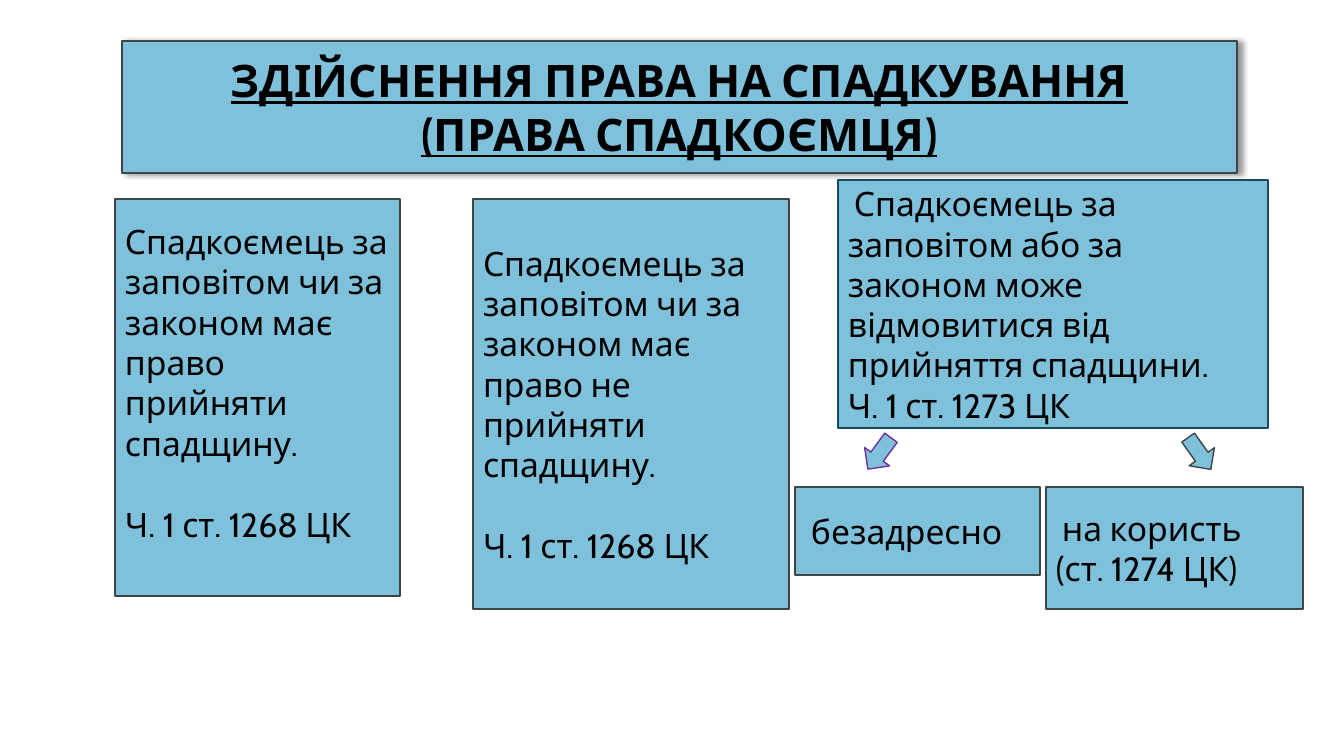
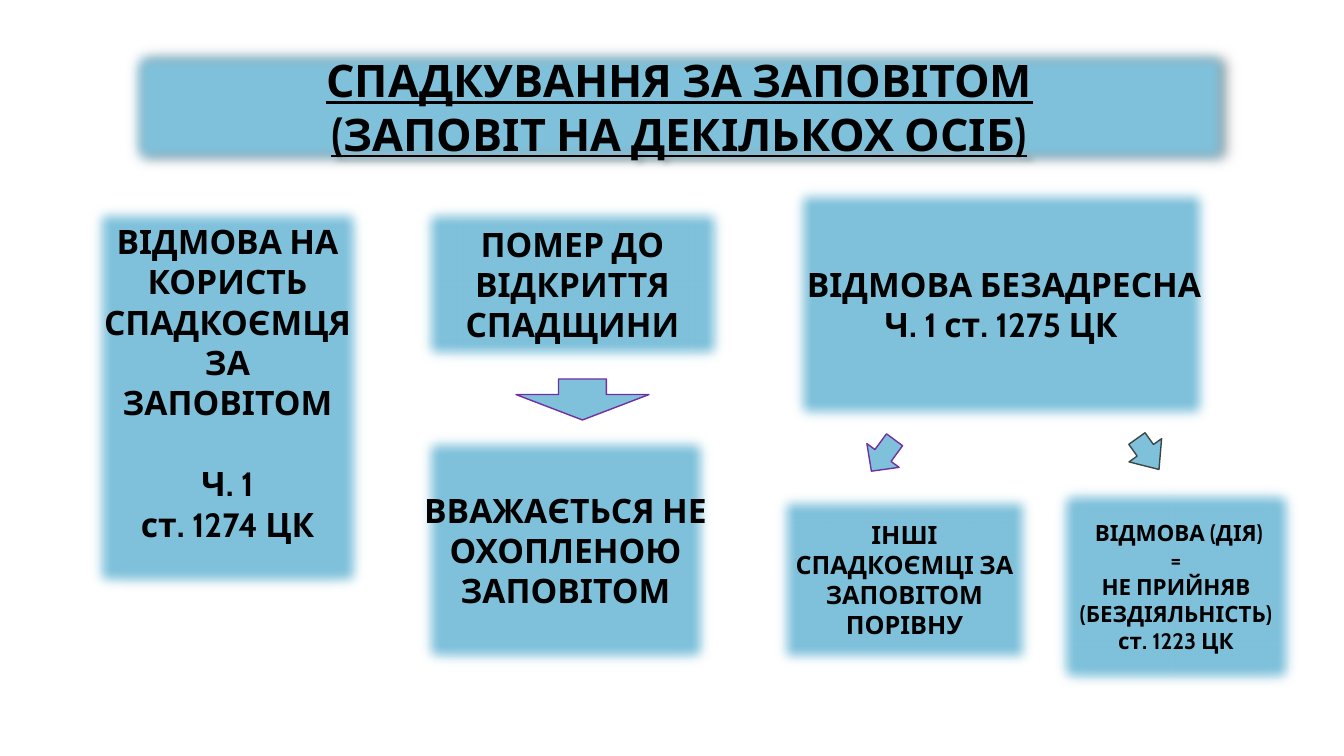
from dataclasses import dataclass
from lxml import etree
from pptx import Presentation
from pptx import util as u
from pptx.dml.color import RGBColor
from pptx.enum import shapes, text
from pptx.oxml.ns import qn

PX = 914400 / 100.8
SLIDE_SIZE = (1344, 756)


@dataclass(frozen=True)
class Theme:
    font: str = "Cabin"
    fill: str = "7FC1DB"
    ink: str = "000000"
    outline: str = "3D4647"
    deep_outline: str = "1A4A5D"
    violet: str = "7030A0"
    title_size: int = 32
    body_size: int = 24
    note_size: int = 18
    small_size: int = 16
    gap: int = 29  # points between a statement and its citation
    soft_edge: int = 14  # px


@dataclass(frozen=True)
class Box:
    place: tuple
    lines: tuple
    size: int = Theme.body_size
    outline: str = Theme.outline
    first_indent: int = 0
    gap_before: int = -1  # index of the paragraph set apart
    bottom_inset: int = 5


@dataclass(frozen=True)
class Arrow:
    place: tuple
    rotation: float = 0
    outline: str = Theme.outline
    proportions: tuple = (0.5, 0.5)


THEME = Theme()
TITLE_PLACE = (122, 41, 1115, 132)
TOP, LOWER_TOP = 199, 487
LEFT_TURN, RIGHT_TURN = 36.4, 324.5

# Content
SLIDES = [
    {
        "title": ("ЗДІЙСНЕННЯ ПРАВА НА СПАДКУВАННЯ", "(ПРАВА СПАДКОЄМЦЯ)"),
        "soft": False,
        "boxes": [
            Box((115, TOP, 285, 397),
                ("Спадкоємець за заповітом чи за законом має право прийняти спадщину.",
                 "Ч. 1 ст. 1268 ЦК"), gap_before=1, bottom_inset=35),
            Box((473, TOP, 316, 410),
                ("Спадкоємець за заповітом чи за законом має право не прийняти спадщину.",
                 "Ч. 1 ст. 1268 ЦК"), gap_before=1),
            Box((838, 180, 430, 248),
                ("Спадкоємець за заповітом або за законом може відмовитися від "
                 "прийняття спадщини.", "Ч. 1 ст. 1273 ЦК"),
                outline=THEME.deep_outline, first_indent=6),
            Box((795, LOWER_TOP, 245, 88), ("безадресно",), first_indent=6),
            Box((1046, LOWER_TOP, 257, 122), ("на користь", "(ст. 1274 ЦК)"),
                first_indent=6),
        ],
        "arrows": [
            Arrow((864, 434, 31, 39), LEFT_TURN, THEME.violet),
            Arrow((1184, 434, 31, 39), RIGHT_TURN),
        ],
    },
    {
        "title": ("СПАДКУВАННЯ ЗА ЗАПОВІТОМ", "(ЗАПОВІТ НА ДЕКІЛЬКОХ ОСІБ)"),
        "soft": True,
        "boxes": [
            Box((85, TOP, 285, 397),
                ("ВІДМОВА НА КОРИСТЬ СПАДКОЄМЦЯ", "ЗА\vЗАПОВІТОМ", "Ч. 1", "ст. 1274 ЦК"),
                gap_before=2, bottom_inset=35),
            Box((414, TOP, 317, 170), ("ПОМЕР ДО ВІДКРИТТЯ СПАДЩИНИ",)),
            Box((414, 428, 303, 244), ("ВВАЖАЄТЬСЯ НЕ ОХОПЛЕНОЮ ЗАПОВІТОМ",)),
            Box((786, 180, 430, 248), ("ВІДМОВА БЕЗАДРЕСНА", "Ч. 1 ст. 1275 ЦК"),
                outline=THEME.deep_outline, first_indent=6),
            Box((770, LOWER_TOP, 269, 185), ("ІНШІ СПАДКОЄМЦІ ЗА ЗАПОВІТОМ ПОРІВНУ",),
                THEME.note_size),
            Box((1049, 480, 254, 213),
                ("ВІДМОВА (ДІЯ)", "=", "НЕ ПРИЙНЯВ", "(БЕЗДІЯЛЬНІСТЬ)", "ст. 1223 ЦК"),
                THEME.small_size, first_indent=6),
        ],
        "arrows": [
            Arrow((516, 379, 133, 41), 0, THEME.violet, (0.36, 0.62)),
            Arrow((863, 436, 40, 39), LEFT_TURN, THEME.violet),
            Arrow((1128, 435, 40, 38), RIGHT_TURN, proportions=(0.5, 0.62)),
        ],
    },
]


def emu(px):
    return u.Emu(round(px * PX))


def add_filled_shape(slide, kind, place, outline):
    shape = slide.shapes.add_shape(kind, *map(emu, place))
    shape.shadow.inherit = False
    shape.fill.solid()
    shape.fill.fore_color.rgb = RGBColor.from_string(THEME.fill)
    shape.line.color.rgb = RGBColor.from_string(outline)
    shape.line.width = u.Pt(1)
    return shape


def add_effects(shape, shadow, soft):
    effects = shape._element.spPr.find(qn("a:effectLst"))
    if shadow:
        outer = etree.SubElement(effects, qn("a:outerShdw"), blurRad=str(u.Pt(4)),
                                 dist=str(u.Pt(3)), dir="0", algn="tl", rotWithShape="0")
        color = etree.SubElement(outer, qn("a:srgbClr"), val=THEME.ink)
        etree.SubElement(color, qn("a:alpha"), val="40000")
    if soft:
        etree.SubElement(effects, qn("a:softEdge"), rad=str(emu(THEME.soft_edge)))


def add_box(slide, box, centered, bold, title=False, soft=False):
    shape = add_filled_shape(slide, shapes.MSO_SHAPE.RECTANGLE, box.place, box.outline)
    add_effects(shape, title, soft)
    frame = shape.text_frame
    frame.word_wrap = True
    frame.vertical_anchor = text.MSO_ANCHOR.MIDDLE
    frame.margin_left = frame.margin_right = emu(10)
    frame.margin_top, frame.margin_bottom = emu(5), emu(box.bottom_inset)
    frame.text = "\n".join(box.lines)
    for index, paragraph in enumerate(frame.paragraphs):
        paragraph.alignment = text.PP_ALIGN.CENTER if centered else text.PP_ALIGN.LEFT
        if index == 0 and box.first_indent:
            paragraph._p.get_or_add_pPr().set("indent", str(emu(box.first_indent)))
        if index == box.gap_before:
            paragraph.space_before = u.Pt(THEME.gap)
        for run in paragraph.runs:
            run.font.name = THEME.font
            run.font.size = u.Pt(box.size)
            run.font.bold = bold
            run.font.underline = title
            run.font.color.rgb = RGBColor.from_string(THEME.ink)


def add_arrow(slide, arrow):
    shape = add_filled_shape(slide, shapes.MSO_SHAPE.DOWN_ARROW, arrow.place, arrow.outline)
    shape.rotation = arrow.rotation
    for index, proportion in enumerate(arrow.proportions):
        shape.adjustments[index] = proportion


def main():
    presentation = Presentation()
    presentation.slide_width, presentation.slide_height = map(emu, SLIDE_SIZE)
    for content in SLIDES:
        slide = presentation.slides.add_slide(presentation.slide_layouts[6])
        soft = content["soft"]
        # Title band
        title = Box(TITLE_PLACE, content["title"], THEME.title_size)
        add_box(slide, title, centered=True, bold=True, title=True, soft=soft)
        # Statements; the soft-edged slide is centred and bold
        for box in content["boxes"]:
            add_box(slide, box, centered=soft, bold=soft, soft=soft)
        # Arrows
        for arrow in content["arrows"]:
            add_arrow(slide, arrow)
    presentation.save("out.pptx")


if __name__ == "__main__":
    main()
